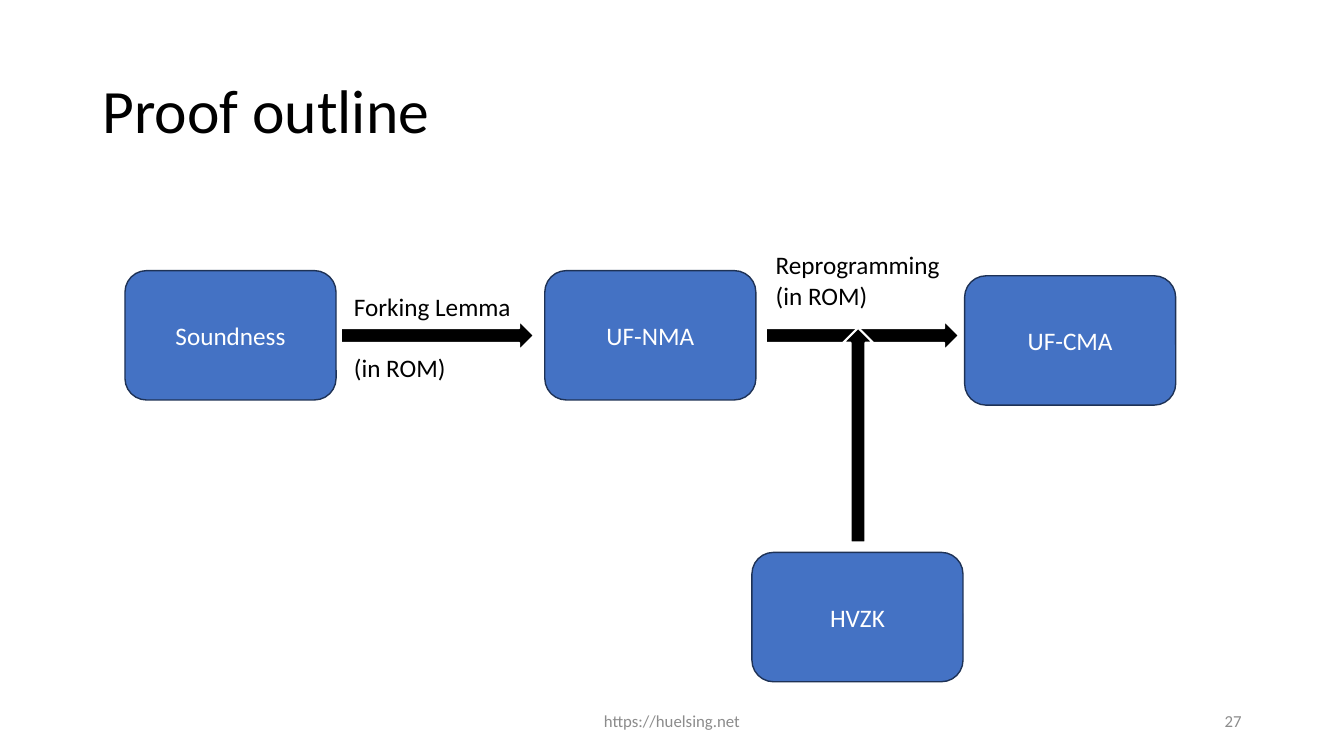
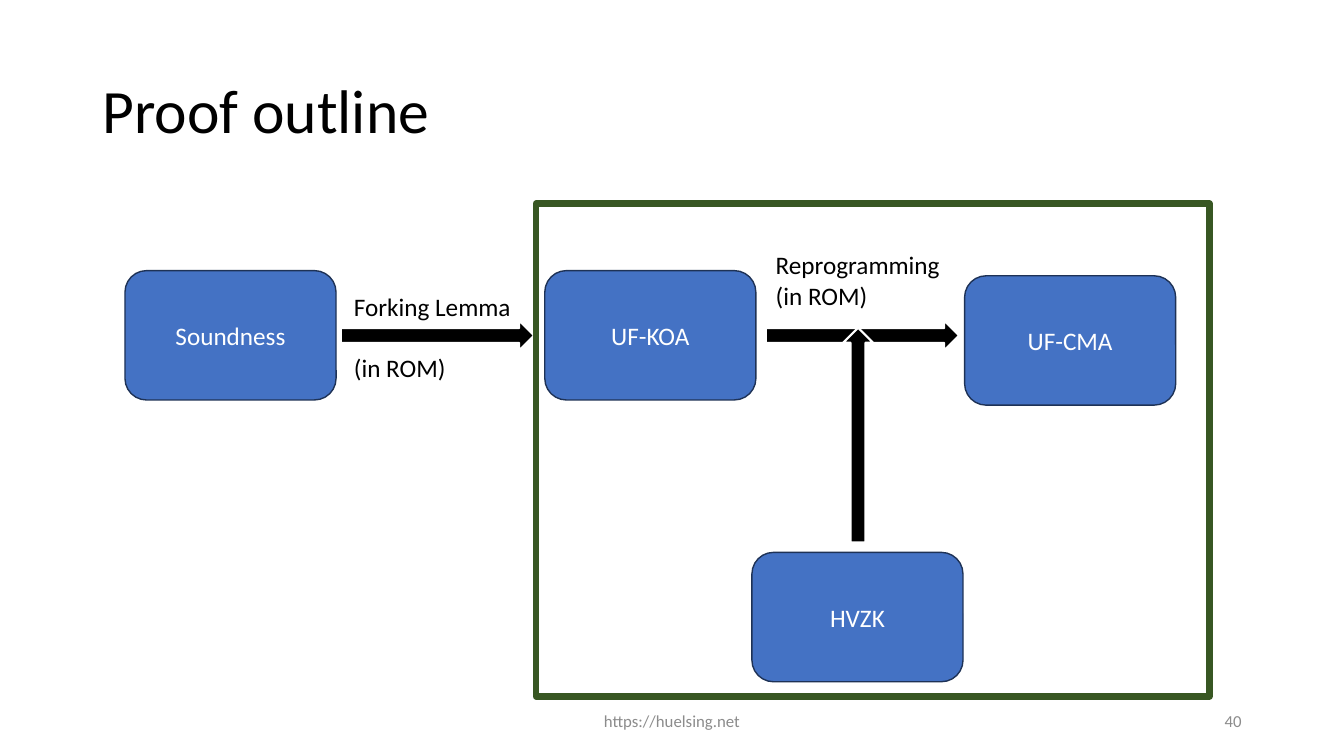
from pptx import Presentation
from pptx.dml.color import RGBColor
from pptx.enum.shapes import MSO_SHAPE
from pptx.enum.text import MSO_ANCHOR, PP_ALIGN
from pptx.util import Cm, Pt

BLACK = RGBColor(0x00, 0x00, 0x00)
WHITE = RGBColor(0xFF, 0xFF, 0xFF)
GREY = RGBColor(0x8C, 0x8C, 0x8C)
BLUE = RGBColor(0x44, 0x72, 0xC4)
NAVY = RGBColor(0x1E, 0x32, 0x56)
GREEN = RGBColor(0x38, 0x57, 0x23)

LEFT, CENTER, RIGHT = PP_ALIGN.LEFT, PP_ALIGN.CENTER, PP_ALIGN.RIGHT
TOP, MIDDLE = MSO_ANCHOR.TOP, MSO_ANCHOR.MIDDLE
ROUNDED, ARROW, RECT = (MSO_SHAPE.ROUNDED_RECTANGLE, MSO_SHAPE.RIGHT_ARROW,
                        MSO_SHAPE.RECTANGLE)

BOX_W, BOX_H = 5.32, 3.26
BOX_X, BOX_Y, BOX_STEP = 3.15, 6.82, 10.58
ARROW_W, ARROW_H = 4.87, 0.75
FOOTER_Y, FOOTER_H = 17.65, 1.01


def write(shape, *lines, size=18, color=BLACK, align=LEFT, anchor=TOP,
          spacing=None, gap=0):
    """Fill a shape with one paragraph per line, gap points apart."""
    tf = shape.text_frame
    tf.word_wrap = True
    tf.vertical_anchor = anchor
    for i, line in enumerate(lines):
        p = tf.paragraphs[0] if i == 0 else tf.add_paragraph()
        p.alignment = align
        p.line_spacing = spacing
        p.space_before = Pt(gap if i else 0)
        r = p.add_run()
        r.text = line
        r.font.name = "Calibri"
        r.font.size = Pt(size)
        r.font.color.rgb = color


def add_shape(s, kind, x, y, w, h, fill, line, line_width):
    """Add a shape without shadow, lengths in cm; fill None leaves it hollow."""
    sp = s.shapes.add_shape(kind, Cm(x), Cm(y), Cm(w), Cm(h))
    sp.shadow.inherit = False
    if fill is None:
        sp.fill.background()
    else:
        sp.fill.solid()
        sp.fill.fore_color.rgb = fill
    sp.line.color.rgb = line
    sp.line.width = Pt(line_width)
    return sp


prs = Presentation()
prs.slide_width, prs.slide_height = Cm(33.87), Cm(19.05)
title_only = prs.slide_layouts[5]

for number, middle_notion, framed in [("27", "UF-NMA", False),
                                      ("40", "UF-KOA", True)]:
    s = prs.slides.add_slide(title_only)

    title = s.shapes.title
    title.left, title.top = Cm(2.33), Cm(1.02)
    title.width, title.height = Cm(29.21), Cm(3.68)
    write(title, "Proof outline", size=44, anchor=MIDDLE, spacing=0.9)

    for text, x, w, align in [("https://huelsing.net", 11.22, 11.43, CENTER),
                              (number, 23.92, 7.62, RIGHT)]:
        footer = s.shapes.add_textbox(Cm(x), Cm(FOOTER_Y), Cm(w), Cm(FOOTER_H))
        write(footer, text, size=12, color=GREY, align=align, anchor=MIDDLE)

    for text, x, y in [("Soundness", BOX_X, BOX_Y),
                       (middle_notion, BOX_X + BOX_STEP, BOX_Y),
                       ("UF-CMA", BOX_X + 2 * BOX_STEP, 6.95),
                       ("HVZK", 18.95, 13.92)]:
        box = add_shape(s, ROUNDED, x, y, BOX_W, BOX_H, BLUE, NAVY, 1)
        write(box, text, color=WHITE, align=CENTER, anchor=MIDDLE)

    for x, y, w, rotation in [(8.59, 8.08, ARROW_W, 0),
                              (19.3, 8.08, ARROW_W, 0),
                              (18.92, 10.59, 5.41, 270)]:
        arrow = add_shape(s, ARROW, x, y, w, ARROW_H, BLACK, WHITE, 1.5)
        arrow.rotation = rotation

    for step, x, y, w, h, gap in [("Forking Lemma", 8.67, 7.21, 5.13, 2.57, 22),
                                  ("Reprogramming", 19.3, 6.17, 4.87, 1.8, 0)]:
        label = s.shapes.add_textbox(Cm(x), Cm(y), Cm(w), Cm(h))
        write(label, step, "(in ROM)", gap=gap)

    if framed:
        add_shape(s, RECT, 13.51, 5.13, 16.97, 12.42, None, GREEN, 4.5)

prs.save("out.pptx")
